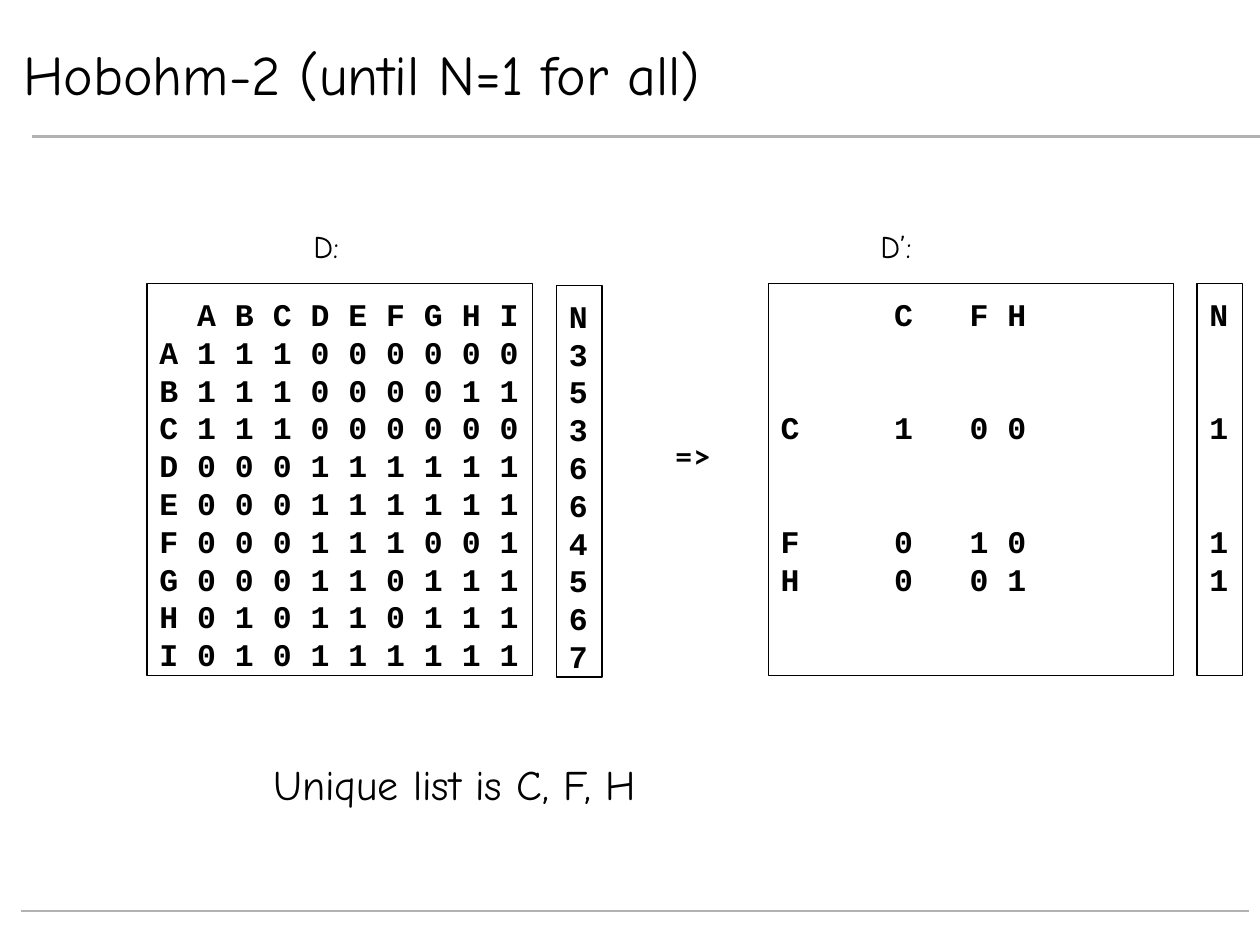
from pptx import Presentation
from pptx.dml.color import RGBColor
from pptx.enum import shapes, text
from pptx.oxml.ns import qn
from pptx.util import Pt
from lxml import etree

COLORS = {"ink": "000000", "paper": "FFFFFF", "rule": "B2B2B2"}
HAND, MONO = "Comic Neue", "Courier New"
ROW = COLUMN = 21.6  # row pitch, and width of two monospaced characters
BOX_TOP, BOX_HEIGHT = 162, 224

DISTANCES = {
    "A": "111000000", "B": "111000011", "C": "111000000",
    "D": "000111111", "E": "000111111", "F": "000111001",
    "G": "000110111", "H": "010110111", "I": "010111111",
}
UNIQUE = {"C": "100", "F": "010", "H": "001"}
UNIQUE_COLUMNS = [3, 5, 6]
UNIQUE_GAPS = [0, 2, 2, 0]  # empty rows above each row


def rgb(name):
    return RGBColor.from_string(COLORS[name])


def set_tabs(p, columns):
    tabs = etree.SubElement(p._p.get_or_add_pPr(), qn("a:tabLst"))
    for column in columns:
        etree.SubElement(tabs, qn("a:tab"), pos=str(Pt(column * COLUMN)), algn="l")


def write(p, words, size=18, font=HAND, bold=False, align=text.PP_ALIGN.LEFT):
    p.alignment = align
    r = p.add_run()
    r.text = words
    r.font.name, r.font.size, r.font.bold = font, Pt(size), bold
    r.font.color.rgb = rgb("ink")


def add_rule(s, x1, x2, y):
    line = s.shapes.add_connector(shapes.MSO_CONNECTOR.STRAIGHT, Pt(x1), Pt(y), Pt(x2), Pt(y))
    line.line.color.rgb = rgb("rule")
    line.line.width = Pt(1.5)
    etree.SubElement(line._element.spPr, qn("a:effectLst"))


def add_title(s, words):
    sp = s.shapes.title
    sp.left, sp.top, sp.width, sp.height = Pt(6), Pt(24), Pt(564), Pt(36)
    sp.fill.solid()
    sp.fill.fore_color.rgb = rgb("paper")
    sp.line.color.rgb = rgb("paper")
    sp.line.width = Pt(0.75)
    tf = sp.text_frame
    tf.vertical_anchor = text.MSO_ANCHOR.MIDDLE
    write(tf.paragraphs[0], words, size=32)


def add_label(s, words, x, y, width, height=29, **style):
    tf = s.shapes.add_textbox(Pt(x), Pt(y), Pt(width), Pt(height)).text_frame
    tf.word_wrap = True
    write(tf.paragraphs[0], words, **style)


def add_grid(s, rows, x, width, top=BOX_TOP, columns=(), gaps=None):
    """Outlined box of monospaced rows, with cells at tab-stop columns."""
    sp = s.shapes.add_shape(shapes.MSO_SHAPE.RECTANGLE, Pt(x), Pt(top), Pt(width), Pt(BOX_HEIGHT))
    sp.shadow.inherit = False
    sp.fill.background()
    sp.line.color.rgb = rgb("ink")
    sp.line.width = Pt(0.75)
    tf = sp.text_frame
    tf.word_wrap = False
    tf.vertical_anchor = text.MSO_ANCHOR.TOP
    tf.margin_top, tf.margin_bottom = Pt(6.6), Pt(0)
    for i, cells in enumerate(rows):
        p = tf.add_paragraph() if i else tf.paragraphs[0]
        if columns:
            set_tabs(p, columns)
        p.line_spacing = Pt(ROW)
        if gaps and gaps[i]:
            p.space_before = Pt(gaps[i] * ROW)
        write(p, "\t".join(cells), font=MONO, bold=True)


def matrix_rows(matrix):
    return [["", *matrix]] + [[name, *values] for name, values in matrix.items()]


def main():
    prs = Presentation()
    prs.slide_width, prs.slide_height = Pt(720), Pt(540)
    s = prs.slides.add_slide(prs.slide_layouts[5])

    add_rule(s, 18, 720, 78)
    add_rule(s, 12, 714, 520.6)
    add_title(s, "Hobohm-2 (until N=1 for all)")

    add_label(s, "D:", 172, 126, 38)
    add_grid(s, matrix_rows(DISTANCES), 84, 220.5, columns=range(1, 10))
    neighbours = [str(values.count("1")) for values in DISTANCES.values()]
    add_grid(s, ["N", *neighbours], 318, 26, top=163)

    add_label(s, "=>", 378, 246, 36, font="Lato", bold=True, align=text.PP_ALIGN.CENTER)

    add_label(s, "D’:", 496, 126, 42)
    add_grid(s, matrix_rows(UNIQUE), 439, 231.5, columns=UNIQUE_COLUMNS, gaps=UNIQUE_GAPS)
    add_grid(s, ["N", *"111"], 684, 26, gaps=UNIQUE_GAPS)

    add_label(s, "Unique list is C, F, H", 149, 430, 493, 36, size=24)
    prs.save("out.pptx")


if __name__ == "__main__":
    main()
